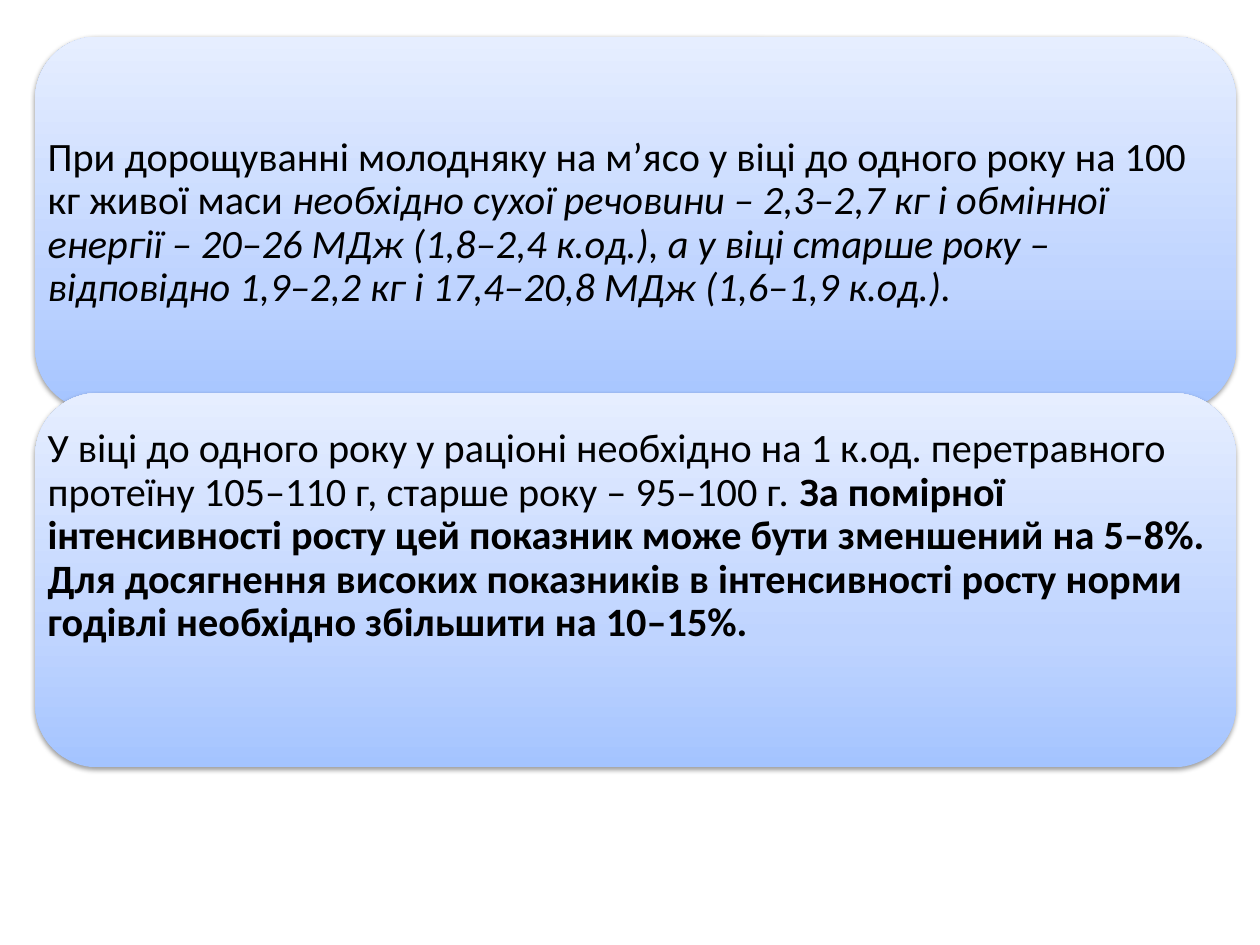
from lxml.etree import SubElement
from pptx import Presentation
from pptx.dml.color import RGBColor
from pptx.enum.shapes import MSO_SHAPE
from pptx.enum.text import MSO_ANCHOR
from pptx.oxml.ns import qn
from pptx.util import Inches, Pt

BLACK = RGBColor(0x00, 0x00, 0x00)
PANEL_GRADIENT = [
    (0, RGBColor(0xA4, 0xC4, 0xFF)),
    (35, RGBColor(0xBF, 0xD4, 0xFF)),
    (100, RGBColor(0xE6, 0xEE, 0xFF)),
]

PANEL_LEFT, PANEL_TOP = 0.28, 0.29
PANEL_WIDTH, PANEL_HEIGHT = 9.53, 2.97
PANEL_STEP = 2.83
INSET = 0.1
FONT_SIZE = 23

# Each panel: plain opening, emphasised ending, its emphasis, extra space below.
PANELS = [
    ("При дорощуванні молодняку на м’ясо у віці до одного року на 100 кг живої маси ",
     "необхідно сухої речовини – 2,3–2,7 кг і обмінної енергії – 20–26 МДж "
     "(1,8–2,4 к.од.), а у віці старше року – відповідно 1,9–2,2 кг і "
     "17,4–20,8 МДж (1,6–1,9 к.од.).",
     "italic", 0),
    ("У віці до одного року у раціоні необхідно на 1 к.од. перетравного протеїну "
     "105–110 г, старше року – 95–100 г. ",
     "За помірної інтенсивності росту цей показник може бути зменшений на 5–8%. "
     "Для досягнення високих показників в інтенсивності росту норми годівлі "
     "необхідно збільшити на 10–15%.",
     "bold", 0.69),
]


def apply_gradient(shape):
    """Fill from bottom to top with the three panel colours."""
    shape.fill.gradient()
    shape.fill.gradient_angle = 90
    stops = shape._element.spPr.find(qn("a:gradFill")).find(qn("a:gsLst"))
    for stop in list(stops):
        stops.remove(stop)
    for position, color in PANEL_GRADIENT:
        stop = SubElement(stops, qn("a:gs"), pos=str(position * 1000))
        SubElement(stop, qn("a:srgbClr"), val=str(color))


def apply_shadow(shape):
    """Add a soft black shadow just below the shape."""
    shape.shadow.inherit = False
    effects = shape._element.spPr.find(qn("a:effectLst"))
    shadow = SubElement(effects, qn("a:outerShdw"), blurRad=str(Pt(3.1)),
                        dist=str(Pt(1.6)), dir="5400000", rotWithShape="0")
    color = SubElement(shadow, qn("a:srgbClr"), val=str(BLACK))
    SubElement(color, qn("a:alpha"), val="38000")


def add_panel(slide, bounds):
    panel = slide.shapes.add_shape(MSO_SHAPE.ROUNDED_RECTANGLE, *bounds)
    apply_gradient(panel)
    panel.line.fill.background()
    apply_shadow(panel)


def add_panel_text(slide, bounds, opening, ending, emphasis, space_below):
    frame = slide.shapes.add_textbox(*bounds).text_frame
    frame.word_wrap = True
    frame.vertical_anchor = MSO_ANCHOR.MIDDLE
    frame.margin_left = frame.margin_right = frame.margin_top = Inches(INSET)
    frame.margin_bottom = Inches(INSET + space_below)

    paragraph = frame.paragraphs[0]
    paragraph.line_spacing = 0.9
    paragraph.font.name = "Calibri"
    paragraph.font.size = Pt(FONT_SIZE)
    paragraph.font.color.rgb = BLACK
    paragraph.add_run().text = opening
    run = paragraph.add_run()
    run.text = ending
    setattr(run.font, emphasis, True)


def main():
    presentation = Presentation()
    presentation.slide_width = Inches(10)
    presentation.slide_height = Inches(7.5)
    slide = presentation.slides.add_slide(presentation.slide_layouts[6])

    for row, (opening, ending, emphasis, space_below) in enumerate(PANELS):
        top = PANEL_TOP + row * PANEL_STEP
        bounds = [Inches(length) for length in
                  (PANEL_LEFT, top, PANEL_WIDTH, PANEL_HEIGHT)]
        add_panel(slide, bounds)
        add_panel_text(slide, bounds, opening, ending, emphasis, space_below)

    presentation.save("out.pptx")


if __name__ == "__main__":
    main()
